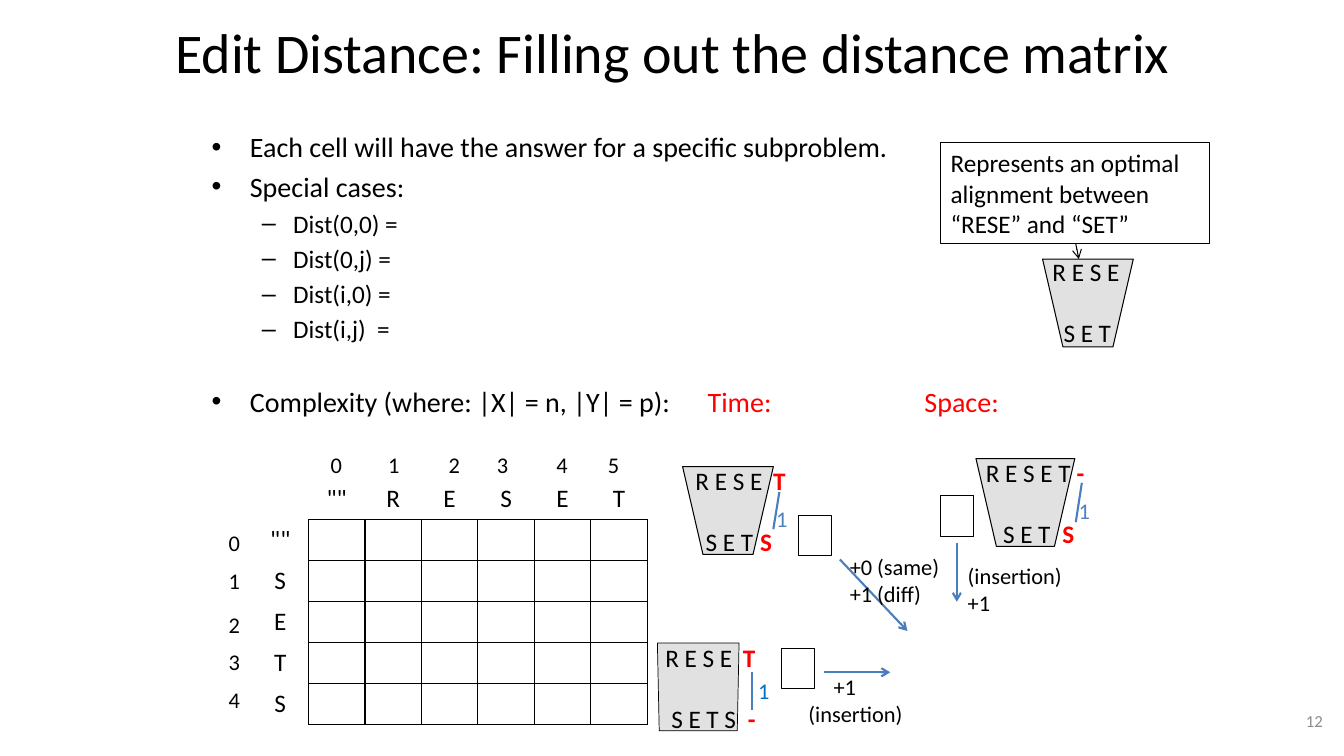
from lxml import etree
from pptx import Presentation
from pptx.dml.color import RGBColor
from pptx.enum.shapes import MSO_CONNECTOR, MSO_SHAPE
from pptx.enum.text import MSO_ANCHOR, PP_ALIGN
from pptx.oxml.ns import qn
from pptx.util import Inches, Pt

BLACK = RGBColor(0x00, 0x00, 0x00)
RED = RGBColor(0xFF, 0x00, 0x00)
GRAY = RGBColor(0x80, 0x80, 0x80)
PAGE_GRAY = RGBColor(0x8C, 0x8C, 0x8C)
ARROW_BLUE = RGBColor(0x4B, 0x7E, 0xBC)
COST_BLUE = RGBColor(0x4F, 0x81, 0xBD)
DEEP_BLUE = RGBColor(0x00, 0x70, 0xC0)
FONT = "Calibri"
TITLE_ONLY = 5
LEFT, CENTER, RIGHT = PP_ALIGN.LEFT, PP_ALIGN.CENTER, PP_ALIGN.RIGHT
MIDDLE = MSO_ANCHOR.MIDDLE
RECTANGLE, TRAPEZOID = MSO_SHAPE.RECTANGLE, MSO_SHAPE.TRAPEZOID
STRAIGHT = MSO_CONNECTOR.STRAIGHT
PLAIN_TABLE_STYLE = "{2D5ABB26-0587-4C30-8999-92F81FD0307C}"


def add_run(para, text, size, color=BLACK, bold=False):
    span = para.add_run()
    span.text = text
    span.font.name, span.font.size, span.font.bold = FONT, Pt(size), bold
    span.font.color.rgb = color


def add_box(page, left, top, width, height):
    box = page.shapes.add_textbox(Inches(left), Inches(top), Inches(width), Inches(height))
    box.text_frame.word_wrap = True
    return box.text_frame


def next_para(frame, first):
    return frame.paragraphs[0] if first else frame.add_paragraph()


def add_label(page, left, top, width, height, lines, size=16, color=BLACK, align=LEFT):
    frame = add_box(page, left, top, width, height)
    for number, line in enumerate(lines):
        para = next_para(frame, number == 0)
        para.alignment = align
        add_run(para, line, size, color)
    return frame


def set_tabs(para, stops):
    tabs = etree.SubElement(para._p.get_or_add_pPr(), qn("a:tabLst"))
    for stop in stops:
        etree.SubElement(tabs, qn("a:tab"), pos=str(Inches(stop)), algn="l")


def set_bullet(para, mark, margin, indent):
    props = para._p.get_or_add_pPr()
    props.set("marL", str(Inches(margin)))
    props.set("indent", str(Inches(-indent)))
    etree.SubElement(props, qn("a:buFont"), typeface="Arial")
    etree.SubElement(props, qn("a:buChar"), char=mark)


def add_line(page, start, end, color=ARROW_BLUE, width=1.5, arrow=False):
    line = page.shapes.add_connector(STRAIGHT, *(Inches(value) for value in (*start, *end)))
    line.line.color.rgb = color
    line.line.width = Pt(width)
    if arrow:
        etree.SubElement(line.line._get_or_add_ln(), qn("a:tailEnd"), type="arrow")
    etree.SubElement(line._element.spPr, qn("a:effectLst"))


def add_outline(page, kind, left, top, width, height, weight=0.75):
    shape = page.shapes.add_shape(kind, Inches(left), Inches(top), Inches(width), Inches(height))
    shape.shadow.inherit = False
    shape.fill.background()
    shape.line.color.rgb = BLACK
    shape.line.width = Pt(weight)
    return shape


def add_title(page, left, top, width, height):
    title = page.shapes.title
    title.left, title.top = Inches(left), Inches(top)
    title.width, title.height = Inches(width), Inches(height)
    title.text_frame.vertical_anchor = MIDDLE
    para = title.text_frame.paragraphs[0]
    para.alignment = CENTER
    add_run(para, "Edit Distance: Filling out the distance matrix", 40)


def add_outline_text(page, left, top, width, height):
    frame = add_box(page, left, top, width, height)
    lines = [
        (0, "Each cell will have the answer for a specific subproblem.", 0),
        (0, "Special cases:", 4),
        (1, "Dist(0,0) =", 3.6),
        (1, "Dist(0,j) =", 3.6),
        (1, "Dist(i,0) =", 3.6),
        (1, "Dist(i,j)  =", 3.6),
        (0, "Complexity (where: |X| = n, |Y| = p):", 29),
    ]
    for number, (level, text, gap) in enumerate(lines):
        para = next_para(frame, number == 0)
        para.level = level
        para.space_before = Pt(gap)
        set_bullet(para, *(("–", 0.81, 0.31) if level else ("•", 0.38, 0.38)))
        add_run(para, text, 18 if level else 20)
    set_tabs(para, (4.92, 7.07))
    for text in ("\tTime:", "\tSpace:"):
        add_run(para, text, 20, RED)


def set_border(cell, side):
    props = cell._tc.get_or_add_tcPr()
    edge = etree.SubElement(props, qn("a:" + side), w=str(Pt(1)))
    fill = etree.SubElement(edge, qn("a:solidFill"))
    etree.SubElement(fill, qn("a:srgbClr"), val=str(BLACK))


def add_matrix(page, left, top, width, height):
    across, down = ['""', *"RESET"], ['""', *"SETS"]
    rows, cols = len(down) + 1, len(across) + 1
    frame = page.shapes.add_table(rows, cols, Inches(left), Inches(top), Inches(width), Inches(height))
    table = frame.table
    table.first_row = table.horz_banding = False
    table._tbl.tblPr.find(qn("a:tableStyleId")).text = PLAIN_TABLE_STYLE
    for row in range(rows):
        for col in range(cols):
            cell = table.cell(row, col)
            para = cell.text_frame.paragraphs[0]
            para.alignment = CENTER
            para.font.size = Pt(18)
            if row == 0 and col:
                add_run(para, across[col - 1], 18)
            elif col == 0 and row:
                add_run(para, down[row - 1], 18)
            sides = {"lnL": row and col, "lnR": row, "lnT": row and col, "lnB": col}
            for side, shown in sides.items():
                if shown:
                    set_border(cell, side)
            cell.fill.background()

    # Row and column indices
    for index, offset in enumerate((0.68, 1.25, 1.85, 2.33, 2.92, 3.43)):
        add_label(page, left + offset, top - 0.32, 0.32, 0.37, [str(index)])
    for index, offset in enumerate((0.45, 0.83, 1.26, 1.63, 2.01)):
        add_label(page, left - 0.33, top + offset, 0.32, 0.37, [str(index)])


def add_alignment(page, trapezoid, slant, text_box, upper, lower, weight=0.75):
    """Two rows of letters in a trapezoid; each row lists (offset, text, color)."""
    shape = add_outline(page, TRAPEZOID, *trapezoid, weight)
    shape.rotation = 180
    shape.adjustments[0] = slant
    shape.fill.solid()
    shape.fill.fore_color.rgb = GRAY
    tint = shape._element.spPr.find(".//" + qn("a:srgbClr"))
    etree.SubElement(tint, qn("a:alpha"), val="23000")

    frame = add_box(page, *text_box, 1.3, 1.01)
    for number, pieces in enumerate((upper, lower)):
        para = next_para(frame, number == 0)
        para.space_before = Pt(22 * number)
        set_tabs(para, [offset for offset, _, _ in pieces if offset])
        for offset, text, color in pieces:
            add_run(para, "\t" + text if offset else text, 18, color, color == RED)


def add_callout(page, left, top, width, height):
    note = add_outline(page, RECTANGLE, left, top, width, height)
    frame = note.text_frame
    frame.word_wrap = True
    frame.paragraphs[0].alignment = LEFT
    add_run(frame.paragraphs[0], "Represents an optimal alignment between “RESE” and “SET”", 18)
    add_line(page, (left + 1.34, top + height), (left + 1.37, top + height + 0.15), BLACK, 0.75, True)
    add_alignment(page, (left + 1.01, top + 1.16, 0.9, 0.87), 0.232, (left + 1.01, top + 1.08),
                  [(0, "R E S E", BLACK)], [(0.11, "S E T", BLACK)])


def add_step(page, cell, start, end, label, lines, first_indent=0):
    add_outline(page, RECTANGLE, *cell, 0.33, 0.4)
    add_line(page, start, end, arrow=True)
    frame = add_label(page, *label, 1.24, 0.64, lines)
    frame.paragraphs[0]._p.get_or_add_pPr().set("marL", str(Inches(first_indent)))


def add_cost(page, start, end, label, color=COST_BLUE):
    add_line(page, start, end)
    add_label(page, *label, 0.32, 0.37, ["1"], color=color)


def add_recurrence(page):
    # Diagonal: same or different letters
    add_alignment(page, (6.77, 4.63, 0.9, 0.87), 0.232, (6.8, 4.57),
                  [(0, "R E S E", BLACK), (0.77, "T", RED)], [(0.1, "S E T", BLACK), (0.64, "S", RED)])
    add_cost(page, (7.73, 4.88), (7.67, 5.25), (7.6, 4.96))
    add_step(page, (7.92, 5.11), (8.33, 5.55), (9, 6.26), (8.33, 5.44), ["+0 (same)", "+1 (diff)"])
    # Downward insertion
    add_alignment(page, (9.68, 4.55, 0.98, 0.87), 0.232, (9.68, 4.49),
                  [(0, "R E S E T", BLACK), (0.9, "-", RED)], [(0.17, "S E T", BLACK), (0.76, "S", RED)])
    add_cost(page, (10.73, 4.79), (10.67, 5.18), (10.6, 4.88))
    add_step(page, (9.33, 4.92), (9.49, 5.39), (9.49, 5.97), (9.5, 5.53), ["(insertion)", "+1"])
    # Rightward insertion
    add_alignment(page, (6.52, 6.38, 0.81, 0.87), 0.022, (6.5, 6.32),
                  [(0, "R E S E", BLACK), (0.77, "T", RED)], [(0.06, "S E T S", BLACK), (0.82, "-", RED)], 0.5)
    add_cost(page, (7.46, 6.67), (7.46, 7.04), (7.42, 6.67), DEEP_BLUE)
    add_step(page, (7.75, 6.43), (8.17, 6.67), (8.83, 6.67), (7.92, 6.63), ["+1", "(insertion)"], 0.25)


def main():
    deck = Presentation()
    deck.slide_width, deck.slide_height = Inches(13.33), Inches(7.5)
    page = deck.slides.add_slide(deck.slide_layouts[TITLE_ONLY])
    add_title(page, 0.67, 0.08, 12, 0.85)
    add_outline_text(page, 2, 1.24, 9.29, 2.68)
    add_matrix(page, 2.5, 4.75, 3.92, 2.44)
    add_recurrence(page)
    add_callout(page, 9.33, 1.41, 2.67, 1.01)
    number = add_label(page, 10.11, 6.95, 3.11, 0.4, ["12"], 12, PAGE_GRAY, RIGHT)
    number.vertical_anchor = MIDDLE
    deck.save("out.pptx")


if __name__ == "__main__":
    main()
